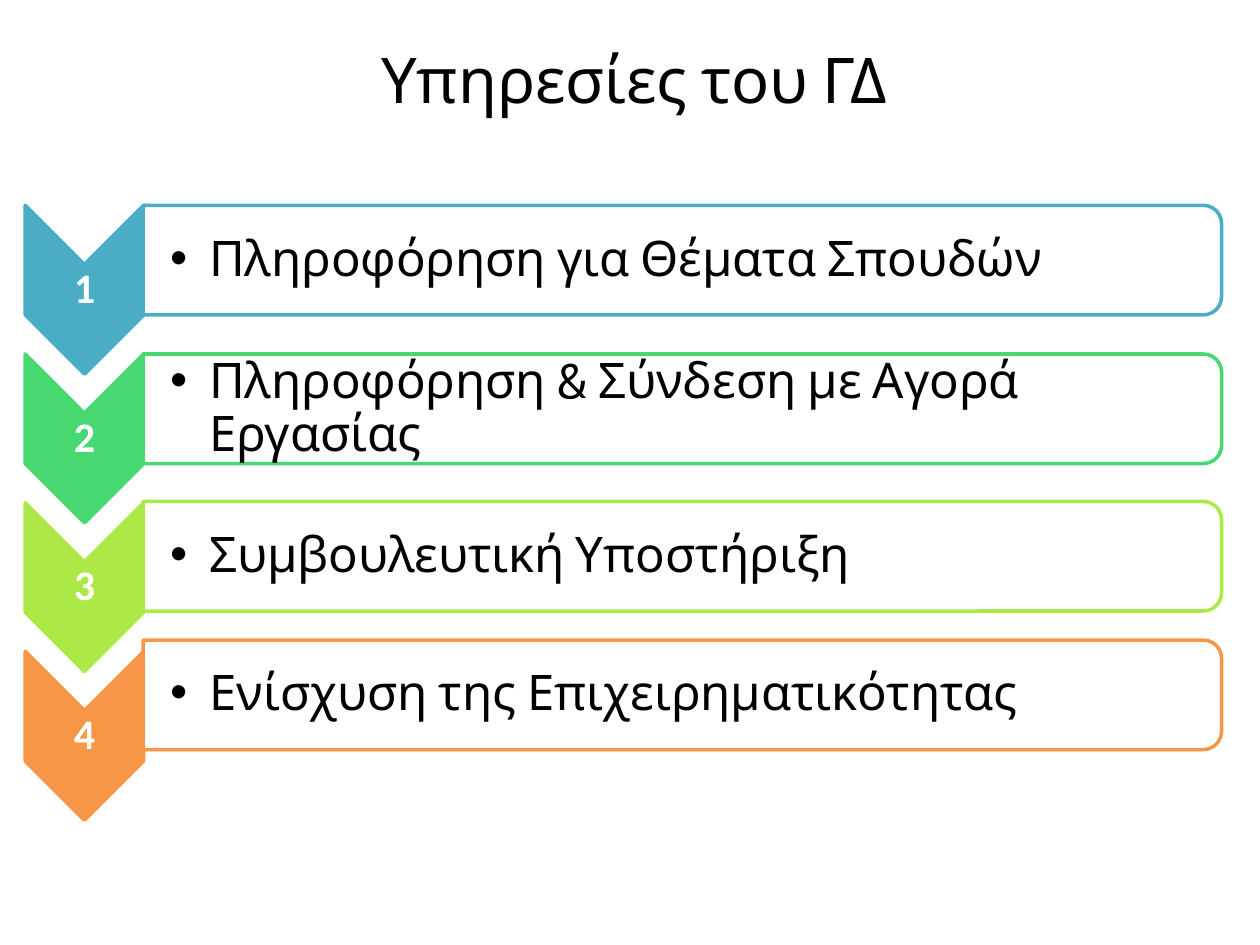
from lxml.etree import SubElement
from pptx import Presentation
from pptx.dml.color import RGBColor
from pptx.enum.shapes import MSO_SHAPE as SHAPE
from pptx.enum.text import MSO_ANCHOR as ANCHOR, PP_ALIGN as ALIGN
from pptx.oxml.ns import qn
from pptx.util import Inches, Pt

SERVICES = [
    ("Πληροφόρηση για Θέματα Σπουδών", "4BACC6", 1.63),
    ("Πληροφόρηση & Σύνδεση με Αγορά Εργασίας", "47D872", 2.81),
    ("Συμβουλευτική Υποστήριξη", "ACE946", 3.98),
    ("Ενίσχυση της Επιχειρηματικότητας", "F79646", 5.08),
]
CHEVRON_TOP = 1.63
STEP = 1.18
CHEVRON_LENGTH, CHEVRON_WIDTH = 1.34, 0.94
PANEL_LENGTH, PANEL_HEIGHT = 8.56, 0.87


def color(hex_string):
    return RGBColor.from_string(hex_string)


def add_bullet(p, indent):
    pPr = p._p.get_or_add_pPr()
    pPr.set("marL", str(Inches(indent)))
    pPr.set("indent", str(-Inches(indent)))
    SubElement(pPr, qn("a:buFont"), typeface="Arial")
    SubElement(pPr, qn("a:buChar"), char="•")


def add_text(s, text, left, top, width, height, size=28, font="Cabin",
             fill="000000", bold=False, align=ALIGN.LEFT, inset=0.02,
             left_inset=None, spacing=None, after=0, bullet=None):
    sp = s.shapes.add_textbox(Inches(left), Inches(top), Inches(width), Inches(height))
    tf = sp.text_frame
    tf.word_wrap = True
    tf.vertical_anchor = ANCHOR.MIDDLE
    tf.margin_top = tf.margin_bottom = tf.margin_right = Inches(inset)
    tf.margin_left = Inches(inset if left_inset is None else left_inset)
    p = tf.paragraphs[0]
    p.alignment = align
    p.line_spacing = spacing
    p.space_after = Pt(after)
    if bullet:
        add_bullet(p, bullet)
    r = p.add_run()
    r.text = text
    r.font.size = Pt(size)
    r.font.name = font
    r.font.bold = bold
    r.font.color.rgb = color(fill)


def add_turned_shape(s, kind, center_x, center_y, length, breadth, fill, line, opacity=100):
    sp = s.shapes.add_shape(kind, Inches(center_x - length / 2 if kind == SHAPE.CHEVRON else center_x - breadth / 2),
                            Inches(center_y - breadth / 2 if kind == SHAPE.CHEVRON else center_y - length / 2),
                            Inches(length if kind == SHAPE.CHEVRON else breadth),
                            Inches(breadth if kind == SHAPE.CHEVRON else length))
    sp.rotation = 90
    sp.shadow.inherit = False
    sp.fill.solid()
    sp.fill.fore_color.rgb = color(fill)
    if opacity < 100:
        rgb = sp._element.spPr.find(qn("a:solidFill")).find(qn("a:srgbClr"))
        SubElement(rgb, qn("a:alpha"), val=str(opacity * 1000))
    sp.line.color.rgb = color(line)
    sp.line.width = Pt(2)
    SubElement(sp.line._ln, qn("a:round"))


def add_service(s, index, text, accent, panel_top):
    top = CHEVRON_TOP + index * STEP
    add_turned_shape(s, SHAPE.CHEVRON, 0.67, top + CHEVRON_LENGTH / 2,
                     CHEVRON_LENGTH, CHEVRON_WIDTH, accent, accent)
    add_text(s, str(index + 1), 0.2, top + 0.47, CHEVRON_WIDTH, 0.4, size=24,
             font="Calibri", fill="FFFFFF", bold=True, align=ALIGN.CENTER,
             spacing=0.9, after=8.4)
    add_turned_shape(s, SHAPE.ROUND_2_SAME_RECTANGLE, 5.415, panel_top + PANEL_HEIGHT / 2,
                     PANEL_LENGTH, PANEL_HEIGHT, "FFFFFF", accent, opacity=90)
    add_text(s, text, 1.13, panel_top + 0.04, 8.52, 0.79, left_inset=0.22,
             spacing=0.9, after=4.2, bullet=0.31)


def main():
    prs = Presentation()
    prs.slide_width, prs.slide_height = Inches(10), Inches(7.5)
    s = prs.slides.add_slide(prs.slide_layouts[6])
    add_text(s, "Υπηρεσίες του ΓΔ", 0.51, 0, 9, 1.25, size=36,
             align=ALIGN.CENTER, inset=0.05, left_inset=0.1)
    for index, (text, accent, panel_top) in enumerate(SERVICES):
        add_service(s, index, text, accent, panel_top)
    prs.save("out.pptx")


if __name__ == "__main__":
    main()
